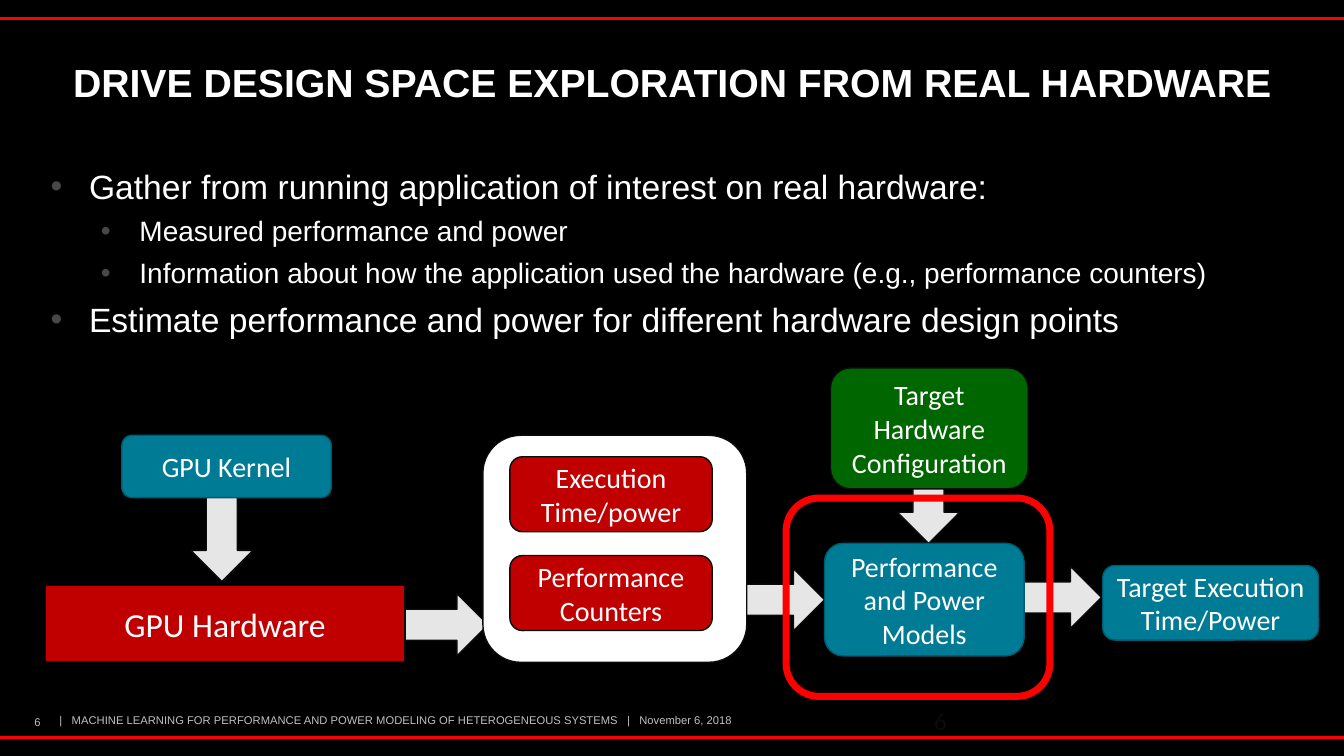
from dataclasses import dataclass

from lxml.etree import SubElement
from pptx import Presentation
from pptx.dml.color import RGBColor
from pptx.enum.shapes import MSO_CONNECTOR, MSO_SHAPE
from pptx.enum.text import MSO_ANCHOR, MSO_AUTO_SIZE, PP_ALIGN
from pptx.oxml.ns import qn
from pptx.util import Cm, Pt


@dataclass(frozen=True)
class Theme:
    black: str = "000000"
    white: str = "FFFFFF"
    ink: str = "0B0B0B"
    red: str = "FF0000"
    dark_red: str = "C00000"
    teal: str = "007B96"
    teal_edge: str = "005B6F"
    green: str = "006600"
    arrow: str = "E7E6E6"
    footer: str = "C1C1C1"
    bullet: str = "484848"
    text_font: str = "Arial"
    diagram_font: str = "Calibri"
    title_size: int = 28
    large_size: int = 24
    medium_size: int = 20
    number_size: int = 18
    footer_size: int = 8


THEME = Theme()


@dataclass(frozen=True)
class Box:
    """A rectangle in centimetres."""
    left: float
    top: float
    width: float
    height: float

    def inner(self, left, top, width, height):
        """Return a box whose corner is measured from this box."""
        return Box(self.left + left, self.top + top, width, height)

    def lengths(self):
        return Cm(self.left), Cm(self.top), Cm(self.width), Cm(self.height)


def color(value):
    return RGBColor.from_string(value)


def place(shape, box):
    shape.left, shape.top, shape.width, shape.height = box.lengths()


def add_span(para, text, size, tint, font=THEME.text_font, bold=False):
    span = para.add_run()
    span.text = text
    span.font.name = font
    span.font.size = Pt(size)
    span.font.bold = bold
    span.font.color.rgb = color(tint)


def add_label(page, box, text, size, tint, font=THEME.text_font,
              align=PP_ALIGN.LEFT, anchor=MSO_ANCHOR.MIDDLE):
    frame = page.shapes.add_textbox(*box.lengths()).text_frame
    frame.word_wrap = True
    frame.vertical_anchor = anchor
    para = frame.paragraphs[0]
    para.alignment = align
    add_span(para, text, size, tint, font)
    return frame


def add_block(shapes, kind, box, fill, edge, text="", size=THEME.medium_size,
              edge_width=1):
    block = shapes.add_shape(kind, *box.lengths())
    block.shadow.inherit = False
    if fill:
        block.fill.solid()
        block.fill.fore_color.rgb = color(fill)
    else:
        block.fill.background()
    block.line.color.rgb = color(edge)
    block.line.width = Pt(edge_width)
    if text:
        frame = block.text_frame
        frame.word_wrap = True
        frame.vertical_anchor = MSO_ANCHOR.MIDDLE
        para = frame.paragraphs[0]
        para.alignment = PP_ALIGN.CENTER
        add_span(para, text, size, THEME.white, THEME.diagram_font)
    return block


def add_rules(page, box):
    """Draw the red lines along the top and bottom of the box."""
    right = Cm(box.left + box.width)
    for height in (box.top, box.top + box.height):
        rule = page.shapes.add_connector(
            MSO_CONNECTOR.STRAIGHT, Cm(box.left), Cm(height), right, Cm(height))
        rule.line.color.rgb = color(THEME.red)
        rule.line.width = Pt(2)
        SubElement(rule._element.spPr, qn("a:effectLst"))


def add_footer(page, box):
    add_label(page, box.inner(0, 0.26, 0.97, 0.56), "6", THEME.footer_size,
              THEME.footer, align=PP_ALIGN.CENTER)
    frame = add_label(
        page, box.inner(1.04, 0.21, 17.12, 0.58),
        "|   MACHINE LEARNING FOR PERFORMANCE AND POWER MODELING OF "
        "HETEROGENEOUS SYSTEMS   |   November 6, 2018",
        THEME.footer_size, THEME.footer)
    frame.word_wrap = False
    frame.margin_left = frame.margin_right = 0
    frame.margin_top = frame.margin_bottom = Cm(0.1)
    add_label(page, box.inner(22.83, 0, 0.84, 1.02), "6", THEME.number_size,
              THEME.ink, THEME.diagram_font, anchor=MSO_ANCHOR.TOP)


def fill_title(page, box):
    title = page.shapes.title
    place(title, box)
    frame = title.text_frame
    frame.auto_size = MSO_AUTO_SIZE.NONE
    frame.vertical_anchor = MSO_ANCHOR.MIDDLE
    para = frame.paragraphs[0]
    para.alignment = PP_ALIGN.CENTER
    para.line_spacing = 0.9
    add_span(para, "DRIVE DESIGN SPACE EXPLORATION FROM REAL HARDWARE",
             THEME.title_size, THEME.white, bold=True)


def add_bullet(para, margin, hanging):
    properties = para._p.get_or_add_pPr()
    properties.set("marL", str(Cm(margin)))
    properties.set("indent", str(-Cm(hanging)))
    tint = SubElement(properties, qn("a:buClr"))
    SubElement(tint, qn("a:srgbClr"), val=THEME.bullet)
    SubElement(properties, qn("a:buFont"), typeface=THEME.text_font)
    SubElement(properties, qn("a:buChar"), char="•")


def fill_body(page, box):
    body = page.placeholders[1]
    place(body, box)
    frame = body.text_frame
    frame.auto_size = MSO_AUTO_SIZE.NONE
    frame.vertical_anchor = MSO_ANCHOR.TOP
    points = (
        (0, "Gather from running application of interest on real hardware:"),
        (1, "Measured performance and power"),
        (1, "Information about how the application used the hardware "
            "(e.g., performance counters)"),
        (0, "Estimate performance and power for different hardware design points"),
    )
    for index, (level, text) in enumerate(points):
        para = frame.add_paragraph() if index else frame.paragraphs[0]
        add_bullet(para, 0.97 + 1.27 * level, 0.97)
        para.level = level
        para.alignment = PP_ALIGN.LEFT
        para.line_spacing = 1.2
        para.space_before = Pt(1 if index else 0)
        add_span(para, text, THEME.medium_size if level else THEME.large_size,
                 THEME.white)


def add_measurements(page, box):
    """Group the white panel with the two measured results on it."""
    shapes = page.shapes.add_group_shape().shapes
    rounded = MSO_SHAPE.ROUNDED_RECTANGLE
    add_block(shapes, rounded, box, THEME.white, THEME.ink)
    for index, text in enumerate(("Execution Time/power", "Performance Counters")):
        add_block(shapes, rounded, box.inner(0.68, 0.54 + 2.49 * index, 5.1, 1.89),
                  THEME.dark_red, THEME.ink, text)


def add_diagram(page, box):
    arrows = (
        (17.4, 5.06, 2.24, 0),
        (3.33, 3.48, 2.24, 90),
        (8.92, 5.69, 2.24, 0),
        (24.23, 5, 2.39, 0),
        (21.14, 2.52, 2.24, 90),
    )
    for left, top, width, rotation in arrows:
        arrow = add_block(page.shapes, MSO_SHAPE.RIGHT_ARROW,
                          box.inner(left, top, width, 1.57), THEME.arrow, THEME.ink)
        arrow.rotation = rotation
    add_block(page.shapes, MSO_SHAPE.RECTANGLE, box.inner(0, 5.49, 9.07, 1.91),
              THEME.dark_red, THEME.ink, "GPU Hardware", THEME.large_size)
    add_measurements(page, box.inner(11.03, 1.7, 6.65, 5.72))
    teal = (THEME.teal, THEME.teal_edge)
    green = (THEME.green, THEME.ink)
    stages = (
        ("GPU Kernel", (1.93, 1.7, 5.28, 1.57), teal),
        ("Target Execution Time/Power", (26.65, 4.98, 5.44, 1.88), teal),
        ("Performance and Power Models", (19.64, 4.42, 5.03, 2.84), teal),
        ("Target Hardware Configuration", (19.79, 0, 4.98, 3.05), green),
    )
    for text, spot, (fill, edge) in stages:
        add_block(page.shapes, MSO_SHAPE.ROUNDED_RECTANGLE, box.inner(*spot),
                  fill, edge, text)
    add_block(page.shapes, MSO_SHAPE.ROUNDED_RECTANGLE,
              box.inner(18.67, 3.28, 6.65, 5), None, THEME.red, edge_width=5)


def main():
    deck = Presentation()
    deck.slide_width, deck.slide_height = Cm(33.87), Cm(19.05)
    page = deck.slides.add_slide(deck.slide_layouts[1])
    page.background.fill.solid()
    page.background.fill.fore_color.rgb = color(THEME.black)
    add_rules(page, Box(0, 0.46, 33.87, 18.13))
    fill_title(page, Box(1.09, 1.24, 31.7, 1.78))
    fill_body(page, Box(1.02, 3.84, 31.83, 13.72))
    add_footer(page, Box(0.46, 17.65, 23.67, 1.02))
    add_diagram(page, Box(1.14, 9.27, 32.09, 8.28))
    deck.save("out.pptx")


if __name__ == "__main__":
    main()
